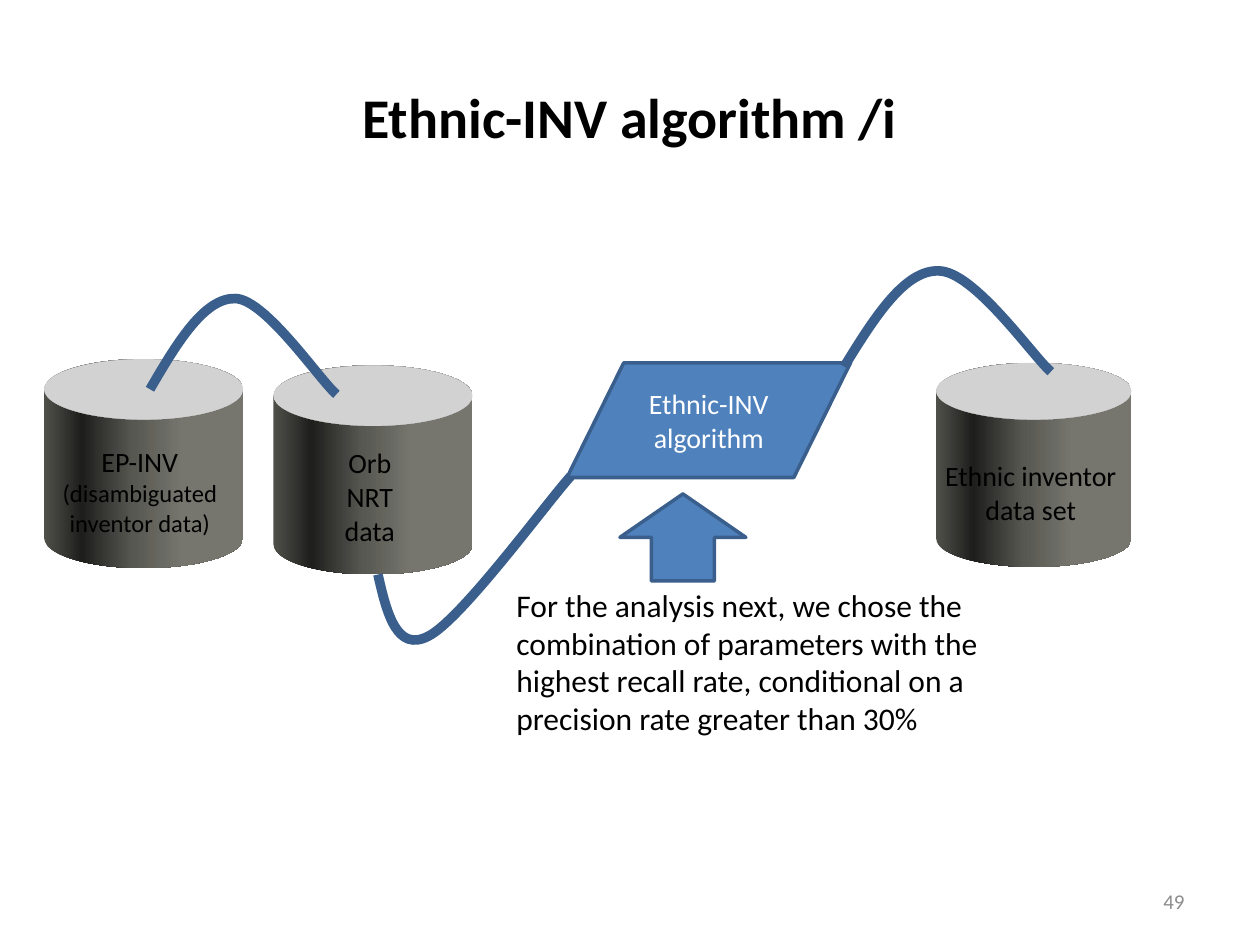
from lxml import etree
from pptx import Presentation
from pptx.dml.color import RGBColor
from pptx.enum.shapes import MSO_SHAPE
from pptx.enum.text import MSO_ANCHOR, PP_ALIGN
from pptx.oxml.ns import qn
from pptx.util import Inches, Pt

BLACK = RGBColor(0x00, 0x00, 0x00)
WHITE = RGBColor(0xFF, 0xFF, 0xFF)
GREY = RGBColor(0x8C, 0x8C, 0x8C)
LID = RGBColor(0xD2, 0xD2, 0xD2)
BLUE = RGBColor(0x4F, 0x81, 0xBD)
DARK_BLUE = RGBColor(0x3A, 0x5F, 0x8C)
# Side shading of a cylinder: position in percent and colour
SHADES = [(0, RGBColor(0x50, 0x50, 0x4A)), (19, RGBColor(0x1E, 0x1E, 0x1C)),
          (45, RGBColor(0x58, 0x58, 0x52)), (70, RGBColor(0x76, 0x76, 0x6F)),
          (100, RGBColor(0x78, 0x78, 0x70))]
CENTER, LEFT, RIGHT = PP_ALIGN.CENTER, PP_ALIGN.LEFT, PP_ALIGN.RIGHT
TOP, MIDDLE = MSO_ANCHOR.TOP, MSO_ANCHOR.MIDDLE
CAN, OVAL = MSO_SHAPE.CAN, MSO_SHAPE.OVAL
PROCESS, ARROW = MSO_SHAPE.FLOWCHART_DATA, MSO_SHAPE.UP_ARROW


def inches(values):
    return [Inches(value) for value in values]


def write(frame, *lines, sizes=(16,), color=BLACK, bold=False,
          align=CENTER, anchor=TOP, wrap=True):
    """Write one paragraph per line; the last size serves the remaining lines."""
    frame.word_wrap = wrap
    frame.vertical_anchor = anchor
    for index, line in enumerate(lines):
        para = frame.paragraphs[0] if index == 0 else frame.add_paragraph()
        para.alignment = align
        span = para.add_run()
        span.text = line
        span.font.name = "Calibri"
        span.font.size = Pt(sizes[min(index, len(sizes) - 1)])
        span.font.bold = bold
        span.font.color.rgb = color


def add_text(page, box, *lines, **style):
    write(page.shapes.add_textbox(*inches(box)).text_frame, *lines, **style)


def add_block(page, kind, box, fill, line=None):
    block = page.shapes.add_shape(kind, *inches(box))
    block.shadow.inherit = False
    block.fill.solid()
    block.fill.fore_color.rgb = fill
    if line is None:
        block.line.fill.background()
    else:
        block.line.color.rgb = line
        block.line.width = Pt(2)
    return block


def shade_side(side):
    side.fill.gradient()
    side.fill.gradient_angle = 0
    stops = side._element.spPr.find(qn("a:gradFill")).find(qn("a:gsLst"))
    for stop in list(stops):
        stops.remove(stop)
    for position, color in SHADES:
        stop = etree.SubElement(stops, qn("a:gs"), pos=str(position * 1000))
        etree.SubElement(stop, qn("a:srgbClr"), val=str(color))


def add_database(page, box, lid_height, label_box, *lines, sizes=(16,)):
    left, top, width, height = box
    side = add_block(page, CAN, box, LID)
    side.adjustments[0] = lid_height / min(width, height)
    shade_side(side)
    add_block(page, OVAL, (left, top, width, lid_height), LID)
    add_text(page, label_box, *lines, sizes=sizes, wrap=False)


def add_curve(page, start, *controls):
    """Draw a Bezier curve: three control points for each piece."""
    builder = page.shapes.build_freeform(*inches(start), scale=1.0)
    builder.add_line_segments([inches(point) for point in controls], close=False)
    curve = builder.convert_to_shape()
    curve.shadow.inherit = False
    curve.fill.background()
    curve.line.color.rgb = DARK_BLUE
    curve.line.width = Pt(5.5)
    # Gather the straight pieces by threes into curved ones
    outline = next(curve._element.iter(qn("a:path")))
    pieces = outline.findall(qn("a:lnTo"))
    for first in range(0, len(pieces), 3):
        bend = etree.SubElement(outline, qn("a:cubicBezTo"))
        for piece in pieces[first:first + 3]:
            bend.append(piece[0])
            outline.remove(piece)


def add_sources(page):
    add_database(page, (0.35, 2.85, 1.58, 1.66), 0.48, (0.39, 3.48, 1.44, 0.84),
                 "EP-INV", "(disambiguated", "inventor data)", sizes=(16, 14))
    add_database(page, (2.17, 2.9, 1.58, 1.66), 0.48, (2.63, 3.49, 0.61, 0.91),
                 "Orb", "NRT", "data")
    add_curve(page, (1.19, 3.09), (1.4, 2.73), (1.62, 2.36), (1.87, 2.37),
              (2.11, 2.38), (2.54, 3.02), (2.67, 3.13))
    add_curve(page, (3, 4.56), (3.07, 4.87), (3.15, 5.18), (3.4, 5.05),
              (3.66, 4.92), (4.34, 3.99), (4.53, 3.78))


def add_algorithm(page):
    process = add_block(page, PROCESS, (4.5, 2.88, 2.25, 0.91), BLUE, DARK_BLUE)
    write(process.text_frame, "Ethnic-INV algorithm", color=WHITE, anchor=MIDDLE)
    add_text(page, (4, 4.6, 4.58, 1.31),
             "For the analysis next, we chose the combination of parameters "
             "with the highest recall rate, conditional on a precision rate "
             "greater than 30%", sizes=(18,), align=LEFT)
    add_block(page, ARROW, (4.92, 3.92, 1, 0.69), BLUE, DARK_BLUE)


def add_result(page):
    add_database(page, (7.43, 2.88, 1.55, 1.62), 0.45, (7.39, 3.59, 1.58, 0.64),
                 "Ethnic inventor", "data set")
    add_curve(page, (6.7, 2.91), (6.94, 2.52), (7.18, 2.14), (7.45, 2.15),
              (7.73, 2.15), (8.2, 2.83), (8.34, 2.95))


def add_heading(page, box):
    title = page.shapes.title
    title.left, title.top, title.width, title.height = inches(box)
    write(title.text_frame, "Ethnic-INV algorithm /i", sizes=(32,), bold=True,
          anchor=MIDDLE)


def main():
    deck = Presentation()
    deck.slide_width, deck.slide_height = Inches(10), Inches(7.5)
    page = deck.slides.add_slide(deck.slide_layouts[5])
    add_heading(page, (0.5, 0.3, 9, 1.25))
    add_sources(page)
    add_algorithm(page)
    add_result(page)
    # Page number
    add_text(page, (7.17, 6.95, 2.33, 0.4), "49", sizes=(12,), color=GREY,
             align=RIGHT, anchor=MIDDLE)
    deck.save("out.pptx")


if __name__ == "__main__":
    main()
